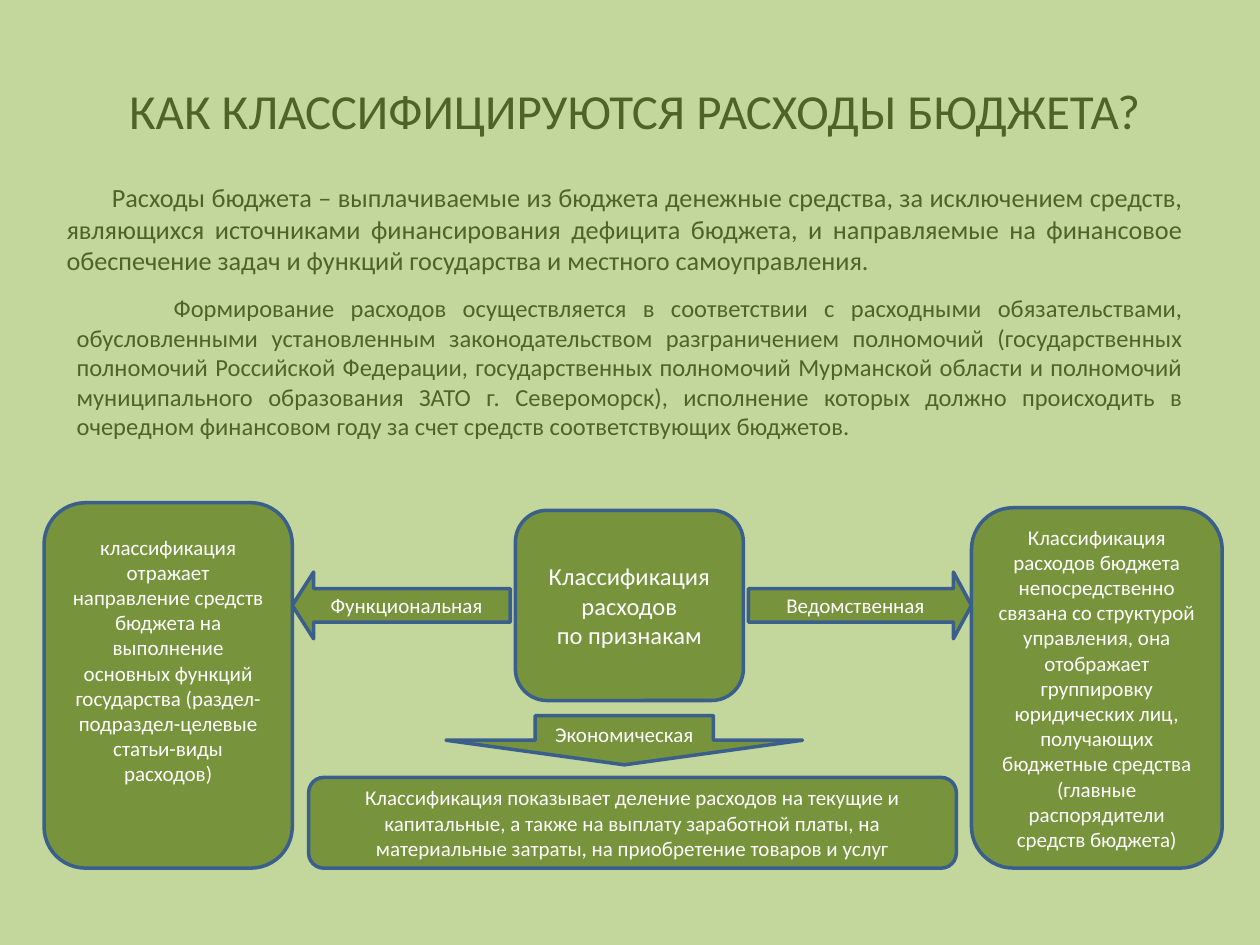
import pptx
import pptx.dml.color
import pptx.enum.shapes
import pptx.enum.text
import pptx.util

Inches = pptx.util.Inches
Pt = pptx.util.Pt
RGBColor = pptx.dml.color.RGBColor
SHAPE = pptx.enum.shapes.MSO_SHAPE
ALIGN = pptx.enum.text.PP_ALIGN
ANCHOR = pptx.enum.text.MSO_ANCHOR

BACKGROUND = RGBColor(0xC3, 0xD6, 0x9B)
DARK_GREEN = RGBColor(0x4F, 0x62, 0x28)
FILL_GREEN = RGBColor(0x77, 0x93, 0x3C)
LINE_BLUE = RGBColor(0x3A, 0x5F, 0x8C)
WHITE = RGBColor(0xFF, 0xFF, 0xFF)
FONT = "Calibri"

# text, (left, top, width, height), size, alignment, first-line indent
TEXTS = [
    ("КАК КЛАССИФИЦИРУЮТСЯ РАСХОДЫ БЮДЖЕТА?",
     (0.43, 0.59, 9.21, 0.57), 28, ALIGN.CENTER, 0),
    ("Расходы бюджета – выплачиваемые из бюджета денежные средства, за исключением "
     "средств, являющихся источниками финансирования дефицита бюджета, и направляемые "
     "на финансовое обеспечение задач и функций государства и местного самоуправления.",
     (0.43, 1.39, 9.06, 0.86), 15, ALIGN.JUSTIFY, 0.36),
    ("Формирование расходов осуществляется в соответствии с расходными обязательствами, "
     "обусловленными установленным законодательством разграничением полномочий "
     "(государственных полномочий Российской Федерации, государственных полномочий "
     "Мурманской области и полномочий муниципального образования ЗАТО г. Североморск), "
     "исполнение которых должно происходить в очередном финансовом году за счет средств "
     "соответствующих бюджетов.",
     (0.51, 2.28, 8.98, 1.28), 14, ALIGN.JUSTIFY, 0.77),
]

# preset, text, (left, top, width, height), size, adjustments, bottom inset
BOX = SHAPE.FLOWCHART_ALTERNATE_PROCESS
INSET = 0.05
DIAGRAM = [
    (BOX, "Классификация расходов\nпо признакам",
     (4.09, 4.05, 1.81, 1.51), 14, (), INSET),
    (SHAPE.LEFT_ARROW, "Функциональная",
     (2.32, 4.54, 1.73, 0.53), 12, (0.5, 0.32), INSET),
    (SHAPE.RIGHT_ARROW, "Ведомственная",
     (5.94, 4.54, 1.77, 0.53), 12, (0.5, 0.27), INSET),
    (BOX, "классификация отражает направление средств бюджета на выполнение основных "
     "функций государства (раздел-подраздел-целевые статьи-виды расходов)",
     (0.35, 3.99, 1.97, 2.9), 12, (), 0.45),
    (BOX, "Классификация расходов бюджета непосредственно связана со структурой "
     "управления, она отображает группировку юридических лиц, получающих бюджетные "
     "средства (главные распорядители средств бюджета)",
     (7.71, 4.03, 1.99, 2.86), 12, (), INSET),
    (SHAPE.DOWN_ARROW, "Экономическая",
     (3.54, 5.68, 2.83, 0.39), 12, (), INSET),
    (BOX, "Классификация показывает деление расходов на текущие и капитальные, а также "
     "на выплату заработной платы, на материальные затраты, на приобретение товаров и услуг",
     (2.45, 6.17, 5.14, 0.72), 12, (), INSET),
]


def write_text(shape, text, size, color, alignment, indent=0):
    frame = shape.text_frame
    frame.word_wrap = True
    frame.text = text
    for paragraph in frame.paragraphs:
        paragraph.alignment = alignment
        if indent:
            paragraph._p.get_or_add_pPr().set("indent", str(Inches(indent)))
        for run in paragraph.runs:
            run.font.name = FONT
            run.font.size = Pt(size)
            run.font.color.rgb = color


def add_diagram_part(slide, preset, text, place, size, adjustments, bottom_inset):
    shape = slide.shapes.add_shape(preset, *map(Inches, place))
    shape.shadow.inherit = False
    for index, value in enumerate(adjustments):
        shape.adjustments[index] = value
    shape.fill.solid()
    shape.fill.fore_color.rgb = FILL_GREEN
    shape.line.color.rgb = LINE_BLUE
    shape.line.width = Pt(2)
    shape.text_frame.vertical_anchor = ANCHOR.MIDDLE
    shape.text_frame.margin_bottom = Inches(bottom_inset)
    write_text(shape, text, size, WHITE, ALIGN.CENTER)


def main():
    presentation = pptx.Presentation()
    presentation.slide_width = Inches(10)
    presentation.slide_height = Inches(7.5)
    slide = presentation.slides.add_slide(presentation.slide_layouts[6])
    slide.background.fill.solid()
    slide.background.fill.fore_color.rgb = BACKGROUND

    for text, place, size, alignment, indent in TEXTS:
        box = slide.shapes.add_textbox(*map(Inches, place))
        write_text(box, text, size, DARK_GREEN, alignment, indent)
    for part in DIAGRAM:
        add_diagram_part(slide, *part)

    presentation.save("out.pptx")


if __name__ == "__main__":
    main()
